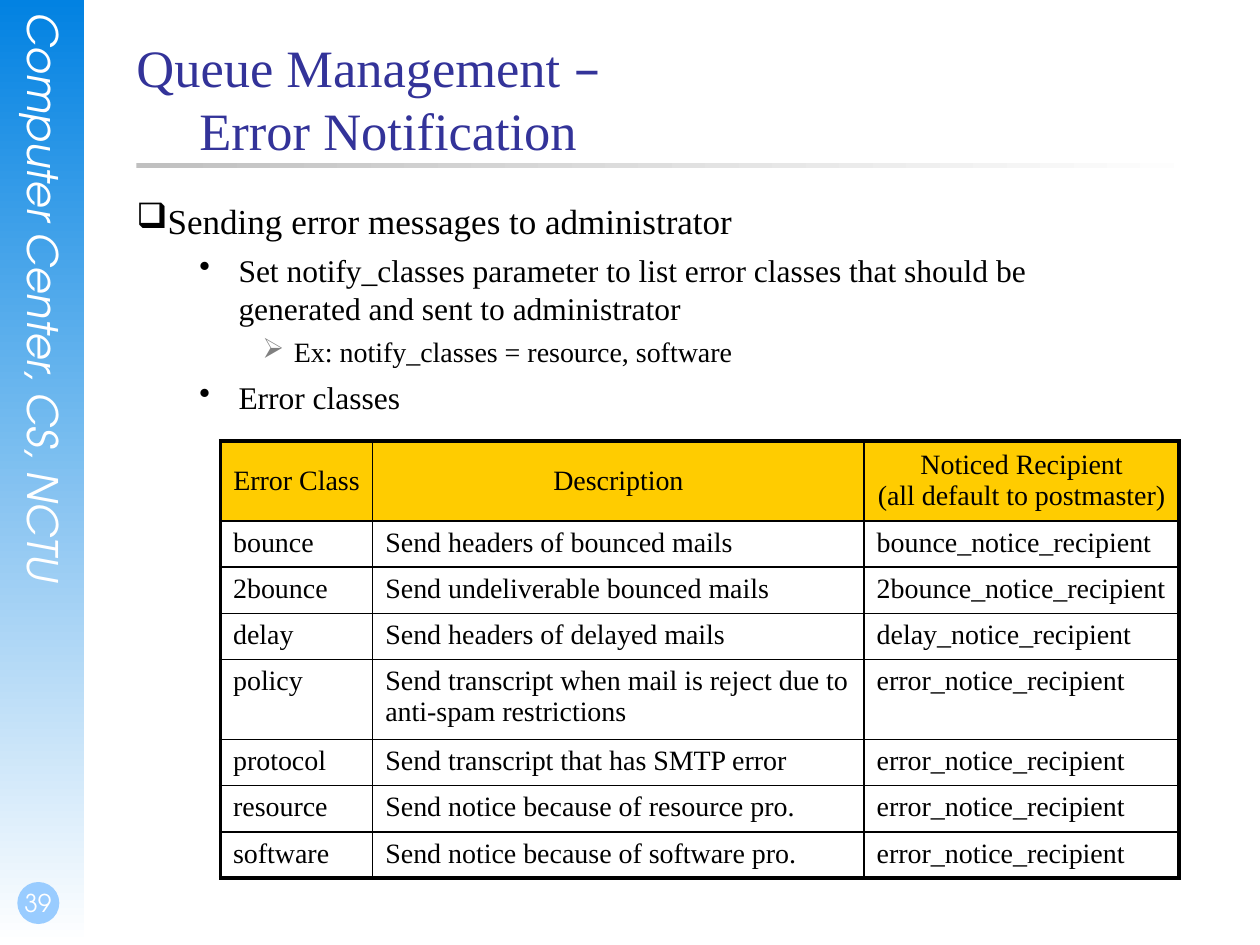
from lxml.etree import SubElement
from pptx import Presentation
from pptx.dml.color import RGBColor
from pptx.enum.shapes import MSO_SHAPE as Shape
from pptx.enum.text import MSO_ANCHOR as Anchor, PP_ALIGN as Align
from pptx.oxml.ns import qn
from pptx.util import Inches, Pt

BLACK = RGBColor(0, 0, 0)
WHITE = RGBColor(0xFF, 0xFF, 0xFF)
GREY = RGBColor(0x80, 0x80, 0x80)
SILVER = RGBColor(0xC0, 0xC0, 0xC0)
SKY = RGBColor(0x02, 0x82, 0xE2)
PALE_BLUE = RGBColor(0x99, 0xCC, 0xFF)
NAVY = RGBColor(0x33, 0x33, 0x99)
GOLD = RGBColor(0xFF, 0xCC, 0x00)

SERIF, SANS, DASH_FONT = "Times New Roman", "TeX Gyre Adventor", "DejaVu Sans"
COLUMNS, ROWS = 240, 180

# level: (size, left margin, indent, bullet, bullet colour)
OUTLINE_LEVELS = [
    (20, 0, 0, "❑", BLACK),
    (18, 0.81, -0.31, "•", BLACK),
    (16, 1.25, -0.25, "➢", GREY),
]
OUTLINE = [
    (0, "Sending error messages to administrator"),
    (1, "Set notify_classes parameter to list error classes that should be "
        "generated and sent to administrator"),
    (2, "Ex: notify_classes = resource, software"),
    (1, "Error classes"),
]
ERROR_CLASSES = [
    ("Error Class", "Description",
     "Noticed Recipient\v(all default to postmaster)"),
    ("bounce", "Send headers of bounced mails", "bounce_notice_recipient"),
    ("2bounce", "Send undeliverable bounced mails", "2bounce_notice_recipient"),
    ("delay", "Send headers of delayed mails", "delay_notice_recipient"),
    ("policy", "Send transcript when mail is reject due to\vanti-spam restrictions",
     "error_notice_recipient"),
    ("protocol", "Send transcript that has SMTP error", "error_notice_recipient"),
    ("resource", "Send notice because of resource pro.", "error_notice_recipient"),
    ("software", "Send notice because of software pro.", "error_notice_recipient"),
]


class SlideBuilder:
    """Draws on one slide; places are in columns and rows of a 240 x 180 grid."""

    def __init__(self, deck):
        self.slide = deck.slides.add_slide(deck.slide_layouts[6])
        self.column = deck.slide_width / COLUMNS
        self.row = deck.slide_height / ROWS

    def place(self, left, top, width, height):
        return (round(left * self.column), round(top * self.row),
                round(width * self.column), round(height * self.row))

    def style(self, paragraph, size, color, font=SERIF, italic=False):
        for run in paragraph.runs:
            run.font.size, run.font.name = Pt(size), font
            run.font.color.rgb, run.font.italic = color, italic

    def shape(self, preset, area, color, fade_angle=None):
        """Fill with a plain colour, or fade it to white along fade_angle."""
        shape = self.slide.shapes.add_shape(preset, *self.place(*area))
        shape.shadow.inherit = False
        shape.line.fill.background()
        if fade_angle is None:
            shape.fill.solid()
            shape.fill.fore_color.rgb = color
            return
        shape.fill.gradient()
        shape.fill.gradient_angle = fade_angle
        for stop, stop_color in zip(shape.fill.gradient_stops, (color, WHITE)):
            stop.color.rgb = stop_color

    def frame(self, area):
        frame = self.slide.shapes.add_textbox(*self.place(*area)).text_frame
        frame.word_wrap = True
        frame.margin_left = frame.margin_right = 0
        frame.margin_top = frame.margin_bottom = 0
        return frame

    def side_label(self, area, text):
        frame = self.frame(area)
        frame.text = text
        frame._txBody.bodyPr.set("vert", "eaVert")
        self.style(frame.paragraphs[0], 24, WHITE, SANS, italic=True)

    def page_number(self, area, number):
        frame = self.frame(area)
        frame.margin_left, frame.margin_bottom = Inches(0.02), Inches(0.05)
        frame.vertical_anchor = Anchor.BOTTOM
        frame.text = number
        frame.paragraphs[0].alignment = Align.CENTER
        self.style(frame.paragraphs[0], 14, WHITE, SANS)

    def title(self, area, first, dash, second):
        paragraph = self.frame(area).paragraphs[0]
        paragraph.add_run().text = first
        dash_run = paragraph.add_run()
        dash_run.text = dash
        paragraph.add_line_break()
        paragraph.add_run().text = second
        self.style(paragraph, 30, NAVY)
        dash_run.font.name = DASH_FONT

    def outline(self, area, items):
        frame = self.frame(area)
        for index, (level, text) in enumerate(items):
            size, margin, indent, bullet, bullet_color = OUTLINE_LEVELS[level]
            paragraph = frame.add_paragraph() if index else frame.paragraphs[0]
            paragraph.text, paragraph.level = text, level
            paragraph.space_before = Pt(size * 0.3)
            self.style(paragraph, size, BLACK)
            properties = paragraph._p.get_or_add_pPr()
            properties.set("marL", str(Inches(margin)))
            properties.set("indent", str(Inches(indent)))
            color = SubElement(properties, qn("a:buClr"))
            SubElement(color, qn("a:srgbClr"), val=str(bullet_color))
            SubElement(properties, qn("a:buChar"), char=bullet)

    def border(self, cell, side, width):
        line = SubElement(cell._tc.get_or_add_tcPr(), qn(f"a:ln{side}"),
                          w=str(Pt(width)))
        fill = SubElement(line, qn("a:solidFill"))
        SubElement(fill, qn("a:srgbClr"), val=str(BLACK))

    def table(self, left, top, widths, heights, records):
        area = self.place(left, top, sum(widths), sum(heights))
        table = self.slide.shapes.add_table(len(heights), len(widths), *area).table
        table.first_row = table.horz_banding = False
        for column, width in zip(table.columns, widths):
            column.width = round(width * self.column)
        for row, height in zip(table.rows, heights):
            row.height = round(height * self.row)
        last_row, last_column = len(heights) - 1, len(widths) - 1
        for r, record in enumerate(records):
            for c, text in enumerate(record):
                cell = table.cell(r, c)
                outer = {"L": c == 0, "R": c == last_column,
                         "T": r == 0, "B": r == last_row}
                for side, is_outer in outer.items():
                    self.border(cell, side, 2.25 if is_outer else 1)
                cell.text = text
                paragraph = cell.text_frame.paragraphs[0]
                self.style(paragraph, 16, BLACK)
                if r == 0:
                    cell.fill.solid()
                    cell.fill.fore_color.rgb = GOLD
                    cell.vertical_anchor = Anchor.MIDDLE
                    paragraph.alignment = Align.CENTER
                else:
                    cell.fill.background()


def main():
    deck = Presentation()
    deck.slide_width, deck.slide_height = Inches(10), Inches(7.5)
    page = SlideBuilder(deck)

    page.shape(Shape.RECTANGLE, (0, 0, 16, ROWS), SKY, fade_angle=270)
    page.side_label((3.6, 2.4, 9.6, 122.6), "Computer Center, CS, NCTU")
    page.shape(Shape.OVAL, (3.3, 168, 8, 8), PALE_BLUE)
    page.page_number((0, 164, 14, 12), "39")

    page.shape(Shape.RECTANGLE, (26, 31, 204, 1), SILVER, fade_angle=0)
    page.title((26, 6.75, 204, 30), "Queue Management ", "–", "\tError Notification")
    page.outline((26, 38, 193, 122), OUTLINE)

    single, double = 8.8, 15.2
    heights = [double if any("\v" in text for text in record) else single
               for record in ERROR_CLASSES]
    page.table(42, 84, [29, 93.6, 60], heights, ERROR_CLASSES)
    deck.save("out.pptx")


if __name__ == "__main__":
    main()
